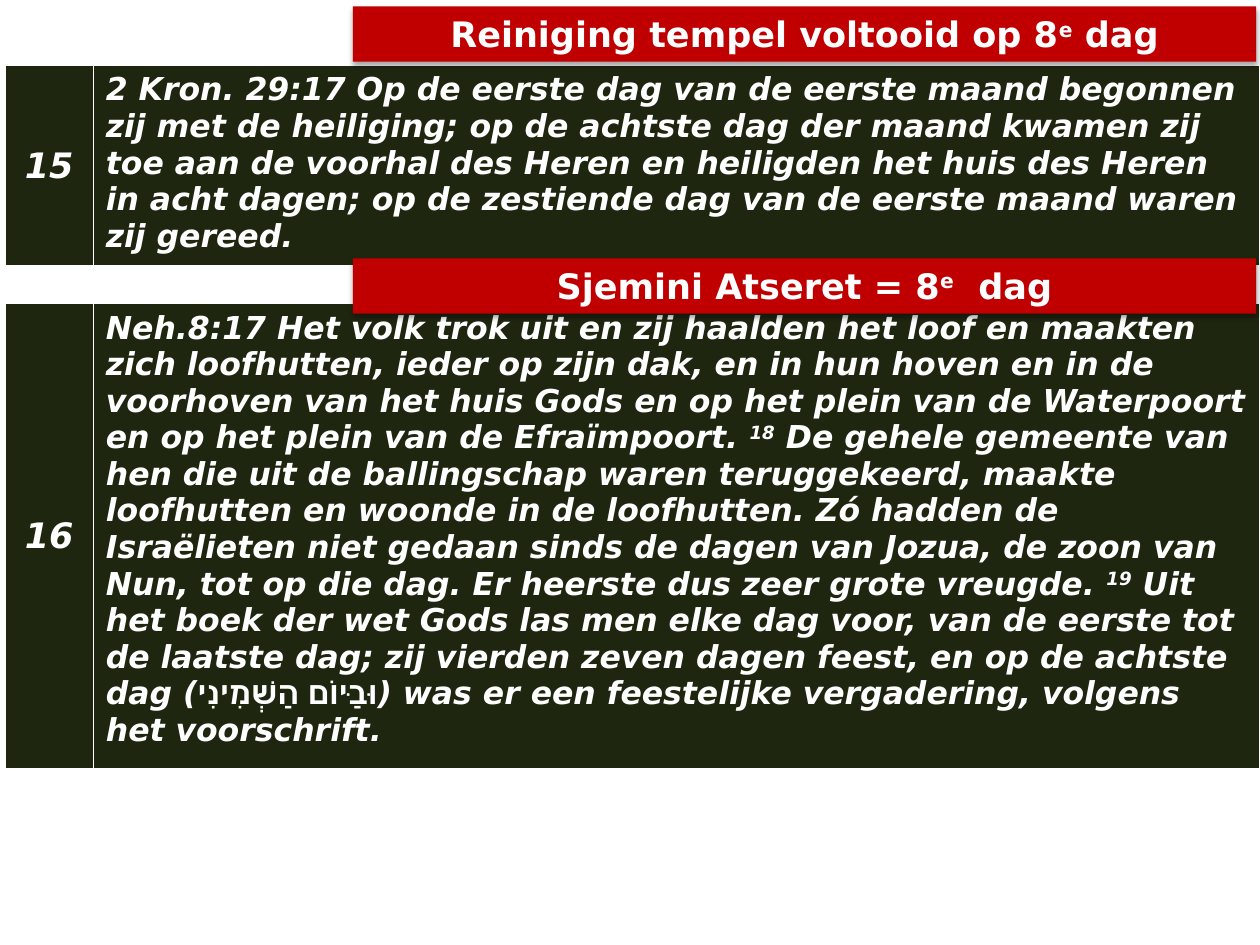
"""Build a slide of two numbered Bible passages, each under a red banner about the eighth day."""
from lxml.etree import SubElement
from pptx import Presentation
from pptx.dml.color import RGBColor as RGB
from pptx.enum.shapes import MSO_SHAPE as SHAPE
from pptx.enum.text import MSO_ANCHOR as ANCHOR, MSO_AUTO_SIZE as AUTO, PP_ALIGN as ALIGN
from pptx.oxml import parse_xml
from pptx.oxml.ns import nsdecls, qn
from pptx.util import Inches, Pt

THEME = {
    "font": "DejaVu Sans", "white": RGB(255, 255, 255),
    "red": RGB(0xC0, 0, 0), "olive": RGB(0x1F, 0x26, 0x10),
    "banner": Pt(20), "number": Pt(20), "verse": Pt(18),
}
SUPER = {"baseline": "30000"}
UPRIGHT = {"i": "0"}

BANNERS = [
    (0.05, [("Reiniging tempel voltooid op 8", {}), ("e", SUPER), (" dag", {})]),
    (2.05, [("Sjemini Atseret = 8", {}), ("e", SUPER), ("  dag", {})]),
]
PASSAGES = [
    (0.52, 1.6, "15", [
        ("2 Kron. 29:17 Op de eerste dag van de eerste maand begonnen zij met de heiliging; "
         "op de achtste dag der maand kwamen zij toe aan de voorhal des Heren en heiligden "
         "het huis des Heren in acht dagen; op de zestiende dag van de eerste maand waren "
         "zij gereed.", {})]),
    (2.41, 3.7, "16", [
        ("Neh.8:17 Het volk trok uit en zij haalden het loof en maakten zich loofhutten, "
         "ieder op zijn dak, en in hun hoven en in de voorhoven van het huis Gods en op het "
         "plein van de Waterpoort en op het plein van de Efraïmpoort. ", {}),
        ("18", SUPER),
        (" De gehele gemeente van hen die uit de ballingschap waren teruggekeerd, maakte "
         "loofhutten en woonde in de loofhutten. Zó hadden de Israëlieten niet gedaan sinds "
         "de dagen van Jozua, de zoon van Nun, tot op die dag. Er heerste dus zeer grote "
         "vreugde. ", {}),
        ("19", SUPER),
        (" Uit het boek der wet Gods las men elke dag voor, van de eerste tot de laatste "
         "dag; zij vierden zeven dagen feest, en op de achtste dag (", {}),
        ("וּבַיּוֹם הַשְּׁמִינִי", UPRIGHT),
        (") was er een feestelijke vergadering, volgens het voorschrift.", {})]),
]


def write(tf, runs, size, italic, align):
    p = tf.paragraphs[0]
    p.alignment = align
    for text, extra in runs:
        r = p.add_run()
        r.text = text
        look = {"name": THEME["font"], "size": size, "bold": True, "italic": italic}
        for key, value in look.items():
            setattr(r.font, key, value)
        r.font.color.rgb = THEME["white"]
        for key, value in extra.items():
            r._r.get_or_add_rPr().set(key, value)


prs = Presentation()
prs.slide_width, prs.slide_height = Inches(10), Inches(7.5)
s = prs.slides.add_slide(prs.slide_layouts[5])

for top, height, number, verse in PASSAGES:
    frame = s.shapes.add_table(1, 2, Inches(0.04), Inches(top), Inches(9.96), Inches(height))
    table = frame.table
    table.first_row = table.horz_banding = False
    table.columns[0].width, table.columns[1].width = Inches(0.7), Inches(9.26)
    for cell in table.rows[0].cells:
        cell.fill.solid()
        cell.fill.fore_color.rgb = THEME["olive"]
        tcPr = cell._tc.get_or_add_tcPr()
        for i, (side, width) in enumerate({"L": 1, "R": 1, "T": 1, "B": 3}.items()):
            tcPr.insert(i, parse_xml(
                f'<a:ln{side} {nsdecls("a")} w="{Pt(width)}"><a:solidFill>'
                f'<a:srgbClr val="{THEME["white"]}"/></a:solidFill></a:ln{side}>'))
    label, body = table.rows[0].cells
    label.vertical_anchor = ANCHOR.MIDDLE
    write(label.text_frame, [(number, {})], THEME["number"], True, ALIGN.CENTER)
    write(body.text_frame, verse, THEME["verse"], True, ALIGN.LEFT)

second = s.shapes.add_shape(SHAPE.RECTANGLE, 0, 0, Inches(1), Inches(1))
for sp, (top, runs) in zip((s.shapes.title, second), BANNERS):
    place = {"left": 2.8, "top": top, "width": 7.17, "height": 0.44}
    for key, value in place.items():
        setattr(sp, key, Inches(value))
    sp.fill.solid()
    sp.fill.fore_color.rgb = THEME["red"]
    sp.line.fill.background()
    effects = SubElement(sp._element.spPr, qn("a:effectLst"))
    effects.append(parse_xml(
        f'<a:outerShdw {nsdecls("a")} blurRad="{Pt(3.1)}" dist="{Pt(1.8)}" dir="5400000" '
        'rotWithShape="0"><a:srgbClr val="000000"><a:alpha val="35000"/></a:srgbClr>'
        '</a:outerShdw>'))
    tf = sp.text_frame
    layout = {"word_wrap": True, "auto_size": AUTO.NONE, "vertical_anchor": ANCHOR.TOP}
    for key, value in layout.items():
        setattr(tf, key, value)
    write(tf, runs, THEME["banner"], False, ALIGN.CENTER)
    s.shapes._spTree.append(sp._element)

prs.save("out.pptx")
